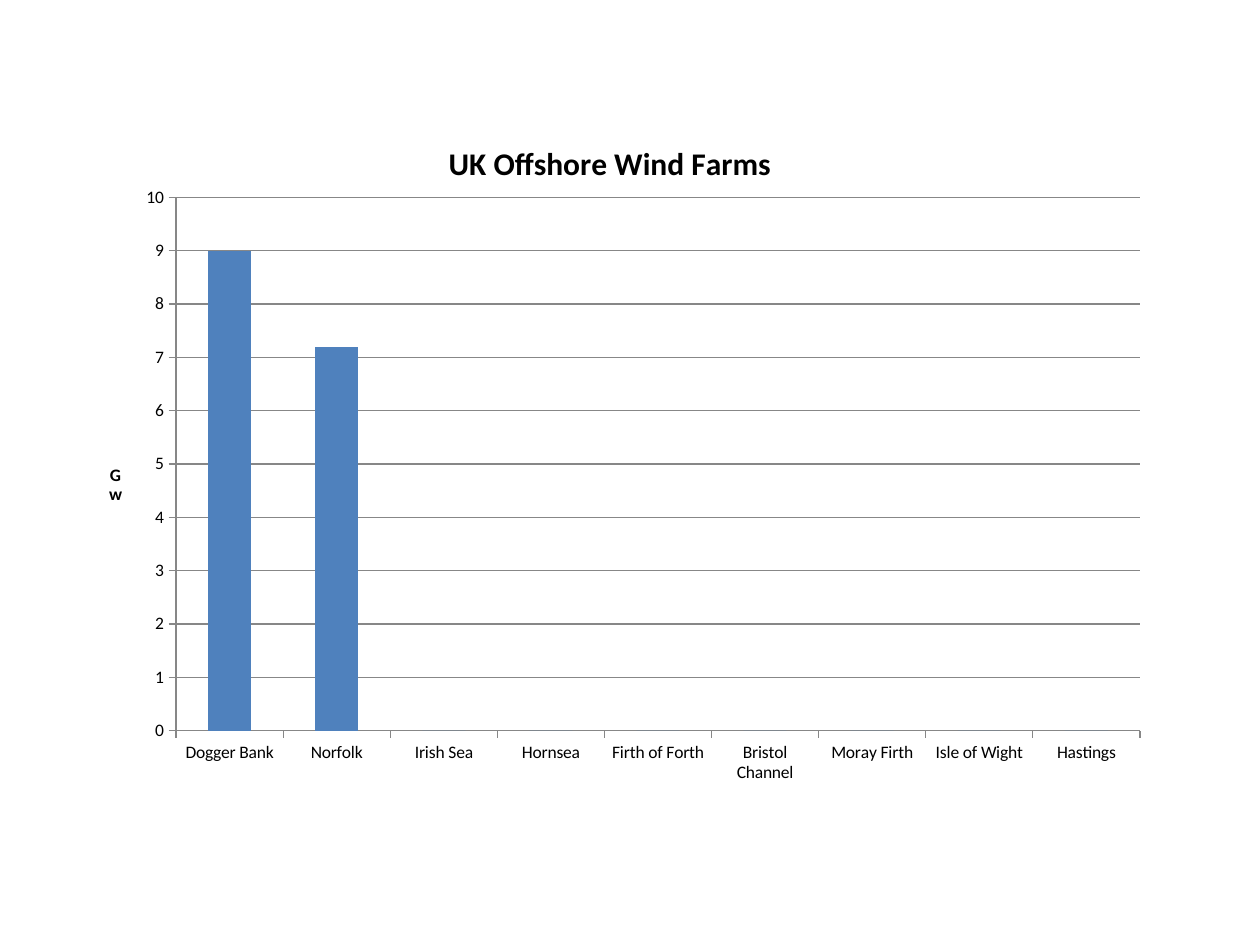
from lxml import etree
from pptx import Presentation
from pptx.chart.data import CategoryChartData
from pptx.dml.color import RGBColor
from pptx.enum.chart import XL_CHART_TYPE, XL_TICK_MARK
from pptx.oxml.ns import qn
from pptx.util import Inches, Pt

COLUMN = XL_CHART_TYPE.COLUMN_CLUSTERED
OUTSIDE = XL_TICK_MARK.OUTSIDE
BLACK = RGBColor(0x00, 0x00, 0x00)
BLUE = RGBColor(0x4F, 0x81, 0xBD)
GREY = RGBColor(0x87, 0x87, 0x87)
FONT = "Calibri"
FARMS = {
    "Dogger Bank": 9,
    "Norfolk": 7.2,
    "Irish Sea": 0,
    "Hornsea": 0,
    "Firth of Forth": 0,
    "Bristol Channel": 0,
    "Moray Firth": 0,
    "Isle of Wight": 0,
    "Hastings": 0,
}


def set_font(font, size, bold=False):
    """Apply the slide's typeface and colour to a font."""
    font.name = FONT
    font.size = Pt(size)
    font.bold = bold
    font.color.rgb = BLACK


def set_line(line):
    """Draw a thin grey line."""
    line.color.rgb = GREY
    line.width = Pt(0.75)


def set_title(title, text, size):
    """Write a bold chart or axis title."""
    frame = title.text_frame
    frame.text = text
    set_font(frame.paragraphs[0].runs[0].font, size, True)


def set_axis(axis):
    """Style an axis with outside ticks and a grey line."""
    axis.major_tick_mark = OUTSIDE
    set_line(axis.format.line)
    set_font(axis.tick_labels.font, 10)


def set_plot(chart, left, top, width, height):
    """Place the inner plot area as fractions of the chart."""
    area = chart.element.find(".//" + qn("c:plotArea"))
    for old in area.findall(qn("c:layout")):
        area.remove(old)
    layout = etree.Element(qn("c:layout"))
    area.insert(0, layout)
    manual = etree.SubElement(layout, qn("c:manualLayout"))
    parts = {"layoutTarget": "inner", "xMode": "edge", "yMode": "edge",
             "x": left, "y": top, "w": width, "h": height}
    for tag, val in parts.items():
        etree.SubElement(manual, qn("c:" + tag)).set("val", str(val))


def stack_title(chart):
    """Stack the letters of the value axis title."""
    path = ".//c:valAx/c:title//a:bodyPr"
    for body in chart.element.xpath(path):
        body.set("rot", "0")
        body.set("vert", "wordArtVert")


def add_farms(slide):
    """Add the column chart of wind farm capacity."""
    data = CategoryChartData()
    data.categories = list(FARMS)
    data.add_series("Series 1", list(FARMS.values()))
    chart = slide.shapes.add_chart(
        COLUMN, Inches(0.59), Inches(0.92), Inches(8.5), Inches(5.35), data
    ).chart
    set_font(chart.font, 10)
    chart.has_legend = False
    chart.has_title = True
    set_title(chart.chart_title, "UK Offshore Wind Farms", 18)
    chart.chart_title.include_in_layout = False

    plot = chart.plots[0]
    plot.gap_width = 150
    plot.vary_by_categories = False
    fill = plot.series[0].format.fill
    fill.solid()
    fill.fore_color.rgb = BLUE

    scale = chart.value_axis
    set_axis(chart.category_axis)
    set_axis(scale)
    scale.minimum_scale = 0
    scale.maximum_scale = 10
    scale.major_unit = 1
    scale.has_major_gridlines = True
    set_line(scale.major_gridlines.format.line)
    set_title(scale.axis_title, "Gw", 10)
    stack_title(chart)
    set_plot(chart, 0.095, 0.121, 0.9, 0.791)


def main():
    """Build and save the slide."""
    deck = Presentation()
    deck.slide_width = Inches(10)
    deck.slide_height = Inches(7.5)
    slide = deck.slides.add_slide(deck.slide_layouts[6])
    add_farms(slide)
    deck.save("out.pptx")


if __name__ == "__main__":
    main()
